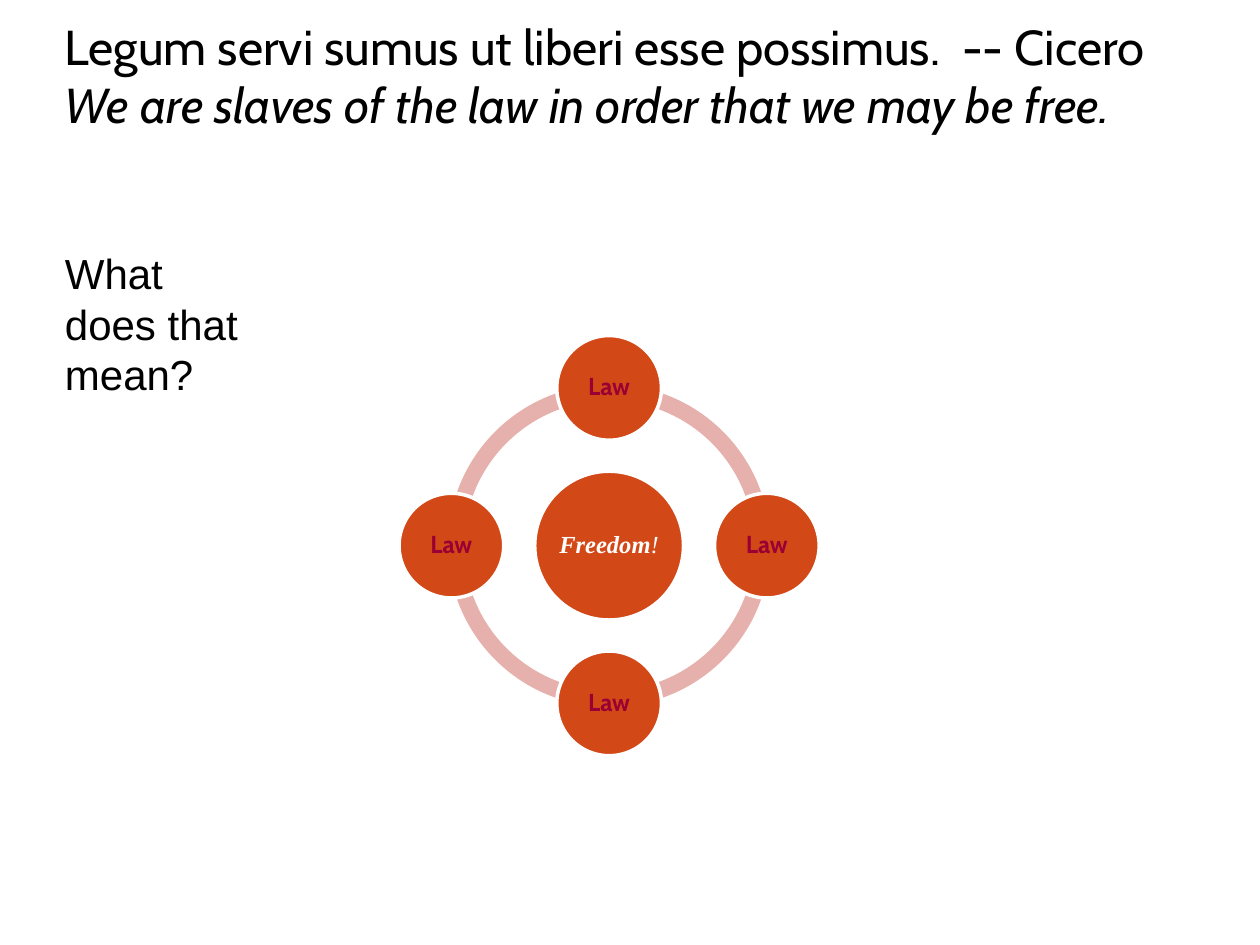
import math

from pptx import Presentation
from pptx.dml.color import RGBColor
from pptx.enum.shapes import MSO_SHAPE
from pptx.enum.text import MSO_ANCHOR, PP_ALIGN
from pptx.util import Cm, Pt

ARC, CIRCLE = MSO_SHAPE.BLOCK_ARC, MSO_SHAPE.OVAL
MIDDLE, CENTER = MSO_ANCHOR.MIDDLE, PP_ALIGN.CENTER

COLORS = {"disc": "D34817", "ring": "E6B1AC", "law": "990033",
          "white": "FFFFFF", "black": "000000"}

# Each paragraph: text, italic
QUOTE = [("Legum servi sumus ut liberi esse possimus.  -- Cicero", False),
         ("We are slaves of the law in order that we may be free.", True)]
QUESTION = [("What does that mean?", False)]
LAWS = ["Law", "Law", "Law", "Law"]  # clockwise from the top
FREEDOM = ("Freedom", "!")

# Centimetres
CENTER_X, CENTER_Y = 12.28, 11.0
RING_SIZE, ORBIT = 6.5, 3.18
LAW_SIZE, FREEDOM_SIZE = 2.11, 3.0
RING_THICKNESS = 0.05  # share of the ring's size


def color(name):
    return RGBColor.from_string(COLORS[name])


def add_centered(shapes, kind, x, y, size, fill):
    """Add a square-framed shape centred on x, y."""
    shape = shapes.add_shape(kind, Cm(x - size / 2), Cm(y - size / 2), Cm(size), Cm(size))
    shape.shadow.inherit = False
    shape.fill.solid()
    shape.fill.fore_color.rgb = color(fill)
    shape.line.fill.background()
    return shape


def add_disc(shapes, x, y, size, words, font_name, text_color):
    disc = add_centered(shapes, CIRCLE, x, y, size, "disc")
    disc.line.color.rgb = color("white")
    disc.line.width = Pt(2)
    frame = disc.text_frame
    frame.word_wrap = False
    frame.vertical_anchor = MIDDLE
    frame.margin_left = frame.margin_right = Cm(0.05)
    frame.margin_top = frame.margin_bottom = Cm(0.05)
    label = frame.paragraphs[0]
    label.alignment = CENTER
    label.line_spacing = 0.9
    for word in words:
        label.add_run().text = word
    style(label, font_name, 14, text_color)
    return label


def style(paragraph, font_name, size, text_color):
    font = paragraph.font
    font.name, font.size = font_name, Pt(size)
    font.color.rgb = color(text_color)


def add_text(shapes, left, top, width, height, lines, font_name, size):
    frame = shapes.add_textbox(Cm(left), Cm(top), Cm(width), Cm(height)).text_frame
    frame.word_wrap = True
    for i, (text, italic) in enumerate(lines):
        paragraph = frame.add_paragraph() if i else frame.paragraphs[0]
        paragraph.text = text
        style(paragraph, font_name, size, "black")
        paragraph.font.italic = italic


def add_cycle(shapes):
    """Draw Freedom in the middle of a ring of laws."""
    quarter = 360 / len(LAWS)
    for i in range(len(LAWS)):
        arc = add_centered(shapes, ARC, CENTER_X, CENTER_Y, RING_SIZE, "ring")
        # Adjustments count angles in units of 5/3 degree
        arc.adjustments[0] = i * quarter * 0.6
        arc.adjustments[1] = (i + 1) * quarter % 360 * 0.6
        arc.adjustments[2] = RING_THICKNESS

    freedom = add_disc(shapes, CENTER_X, CENTER_Y, FREEDOM_SIZE, FREEDOM,
                       "Times New Roman", "white")
    freedom.font.italic = True
    freedom.runs[0].font.bold = True

    for i, law in enumerate(LAWS):
        angle = math.radians(i * quarter - 90)
        label = add_disc(shapes, CENTER_X + ORBIT * math.cos(angle),
                         CENTER_Y + ORBIT * math.sin(angle),
                         LAW_SIZE, [law], "Cabin", "law")
        label.font.bold = True


def main():
    deck = Presentation()
    deck.slide_width, deck.slide_height = Cm(25.4), Cm(19.05)
    slide = deck.slides.add_slide(deck.slide_layouts[6])
    add_cycle(slide.shapes.add_group_shape().shapes)
    add_text(slide.shapes, 1.06, 0.2, 22.43, 2.64, QUOTE, "Cabin", 28)
    add_text(slide.shapes, 1.06, 4.87, 4.01, 3.33, QUESTION, "Arial", 24)
    deck.save("out.pptx")


if __name__ == "__main__":
    main()
